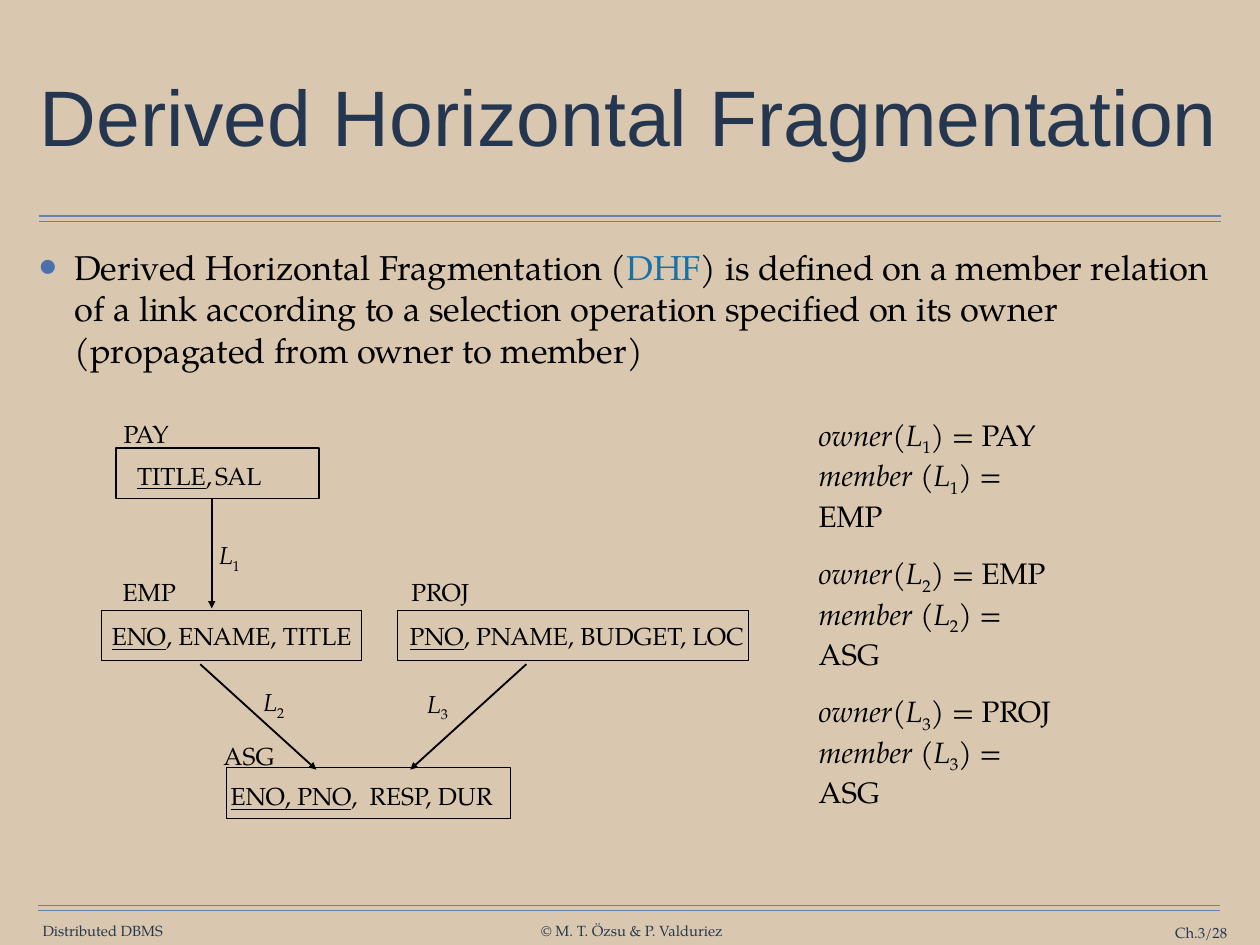
"""Build the slide on derived horizontal fragmentation."""
from lxml import etree
from pptx import Presentation
from pptx import util as u
from pptx.dml.color import RGBColor
from pptx.enum import shapes, text
from pptx.oxml.ns import qn

SERIF = "TeX Gyre Pagella"
INK, NAVY, RULE = "000000", "253750", "6682AA"
UNDER, ITALIC, SUB = {"underline": True}, {"italic": True}, {"baseline": -25000}
LEFT, CENTER, RIGHT = text.PP_ALIGN.LEFT, text.PP_ALIGN.CENTER, text.PP_ALIGN.RIGHT


def color(value):
    return RGBColor.from_string(value)


def link(n):
    return [("L", ITALIC), (str(n), SUB)]


class Deck:
    """Holds the slide and draws each kind of element in one style."""

    def __init__(self, width, height, background):
        self.prs = Presentation()
        self.prs.slide_width, self.prs.slide_height = u.Inches(width), u.Inches(height)
        self.s = self.prs.slides.add_slide(self.prs.slide_layouts[5])
        self.s.background.fill.solid()
        self.s.background.fill.fore_color.rgb = color(background)

    def frame(self, sp, insets, **formats):
        tf = sp.text_frame
        sides = ("margin_left", "margin_top", "margin_right", "margin_bottom")
        values = dict(zip(sides, map(u.Inches, insets)), **formats)
        for name, value in values.items():
            setattr(tf, name, value)
        return tf

    def add_runs(self, p, runs, size, font=SERIF, ink=INK):
        for content, extra in runs:
            if content == "\n":
                p.add_line_break()
                continue
            r = p.add_run()
            r.text = content
            values = {"size": u.Pt(size), "name": font, **extra}
            r.font.color.rgb = color(values.pop("color", ink))
            baseline = values.pop("baseline", None)
            if baseline:
                r._r.get_or_add_rPr().set("baseline", str(baseline))
            for name, value in values.items():
                setattr(r.font, name, value)

    def title(self, box, content, size):
        sp = self.s.shapes.title
        sp.left, sp.top, sp.width, sp.height = map(u.Inches, box)
        tf = self.frame(sp, [0.06] * 4, word_wrap=True,
                        auto_size=text.MSO_AUTO_SIZE.NONE,
                        vertical_anchor=text.MSO_ANCHOR.MIDDLE)
        p = tf.paragraphs[0]
        p.alignment, p.line_spacing = LEFT, 0.9
        self.add_runs(p, [(content, {})], size, "Arial", NAVY)

    def text(self, box, paragraphs, size=20, align=CENTER, ink=INK,
             insets=(0.14, 0.07, 0.14, 0.07), wrap=False, gap=0,
             anchor=text.MSO_ANCHOR.TOP):
        sp = self.s.shapes.add_textbox(*map(u.Inches, box))
        tf = self.frame(sp, insets, word_wrap=wrap, vertical_anchor=anchor,
                        auto_size=text.MSO_AUTO_SIZE.SHAPE_TO_FIT_TEXT)
        for i, runs in enumerate(paragraphs):
            p = tf.add_paragraph() if i else tf.paragraphs[0]
            p.alignment = align
            if i:
                p.space_before = u.Pt(gap)
            self.add_runs(p, runs, size, ink=ink)
        return tf

    def bullet(self, p, indent, ink):
        pPr = p._p.get_or_add_pPr()
        pPr.set("marL", str(u.Inches(indent)))
        pPr.set("indent", str(-u.Inches(indent)))
        buClr = etree.SubElement(pPr, qn("a:buClr"))
        etree.SubElement(buClr, qn("a:srgbClr"), val=ink)
        etree.SubElement(pPr, qn("a:buSzPct"), val="150000")
        etree.SubElement(pPr, qn("a:buFont"), typeface="Arial")
        etree.SubElement(pPr, qn("a:buChar"), char="•")

    def rect(self, box):
        sp = self.s.shapes.add_shape(shapes.MSO_SHAPE.RECTANGLE, *map(u.Inches, box))
        sp.shadow.inherit = False
        sp.fill.background()
        sp.line.color.rgb, sp.line.width = color(INK), u.Pt(1)

    def line(self, points, ink, width, arrow=False):
        sp = self.s.shapes.add_connector(shapes.MSO_CONNECTOR.STRAIGHT,
                                         *map(u.Inches, points))
        sp.line.color.rgb, sp.line.width = color(ink), u.Pt(width)
        if arrow:
            etree.SubElement(sp.line._get_or_add_ln(), qn("a:tailEnd"), type="triangle")
        etree.SubElement(sp._element.spPr, qn("a:effectLst"))


def main():
    d = Deck(14.22, 10.67, "D9C8AF")

    for left, top in ((0.44, 2.44), (0.43, 10.22)):
        for y in (top, top + 0.06):
            d.line((left, y, left + 13.34, y), RULE, 1)

    footers = [
        ((0.47, 10.41, 1.38, 0.2), "Distributed DBMS", CENTER, False),
        ((6.09, 10.41, 2.08, 0.2), "© M. T. Özsu & P. Valduriez", CENTER, False),
        ((12.31, 10.43, 1.54, 0.2), "Ch.3/28", RIGHT, True),
    ]
    for box, content, align, wrap in footers:
        d.text(box, [[(content, {})]], 12, align, NAVY, [0] * 4, wrap,
               anchor=text.MSO_ANCHOR.MIDDLE)

    d.title((0.39, 0.49, 13.44, 1.76), "Derived Horizontal Fragmentation", 64)

    definition = [
        ("Derived Horizontal Fragmentation (", {}),
        ("DHF", {"color": "1771A9"}),
        (") is defined on a member relation of a link according to a selection "
         "operation specified on its owner (propagated from owner to member)", {}),
    ]
    body = d.text((0.38, 2.72, 13.44, 1.6), [definition], 28, LEFT,
                  insets=[0.06] * 4, wrap=True)
    d.bullet(body.paragraphs[0], 0.4, "4A71A9")

    relations = [(1.31, 5.06, 2.29), (1.15, 6.89, 2.93),
                 (2.56, 8.67, 3.2), (4.49, 6.89, 3.96)]
    for left, top, width in relations:
        d.rect((left, top, width, 0.57))

    labels = [
        (1.4, 5.13, 1.14, [("TITLE", UNDER), (",", {})]),
        (2.28, 5.13, 0.82, [("SAL", {})]),
        (1.22, 4.66, 0.86, [("PAY", {})]),
        (1.1, 6.94, 3.03, [("ENO", UNDER), (", ENAME, TITLE", {})]),
        (4.45, 6.94, 4.12, [("PNO", UNDER), (", PNAME, BUDGET, LOC", {})]),
        (2.45, 8.75, 1.74, [("ENO, PNO", UNDER), (",", {})]),
        (4.02, 8.75, 1.69, [("RESP, DUR", {})]),
        (1.24, 6.44, 0.89, [("EMP", {})]),
        (4.49, 6.44, 0.96, [("PROJ", {})]),
        (2.38, 8.3, 0.86, [("ASG", {})]),
        (2.31, 6.03, 0.56, link(1)),
        (2.81, 7.69, 0.56, link(2)),
        (4.66, 7.71, 0.56, link(3)),
    ]
    for left, top, width, runs in labels:
        d.text((left, top, width, 0.48), [runs])

    for arrow in ((2.39, 5.63, 2.39, 6.87), (2.26, 7.5, 3.57, 8.69),
                  (5.94, 7.5, 4.63, 8.69)):
        d.line(arrow, INK, 1.5, arrow=True)

    roles = [("PAY", "EMP"), ("EMP", "ASG"), ("PROJ", "ASG")]
    facts = [[("owner", ITALIC), ("(", {}), *link(n), (f") = {owner}", {}), ("\n", {}),
              ("member ", ITALIC), ("(", {}), *link(n), (f") = {member}", {})]
             for n, (owner, member) in enumerate(roles, 1)]
    d.text((9.14, 4.66, 2.98, 3.03), facts, 24, LEFT,
           insets=(0.1, 0.05, 0.1, 0.05), wrap=True, gap=18)

    d.prs.save("out.pptx")


if __name__ == "__main__":
    main()
